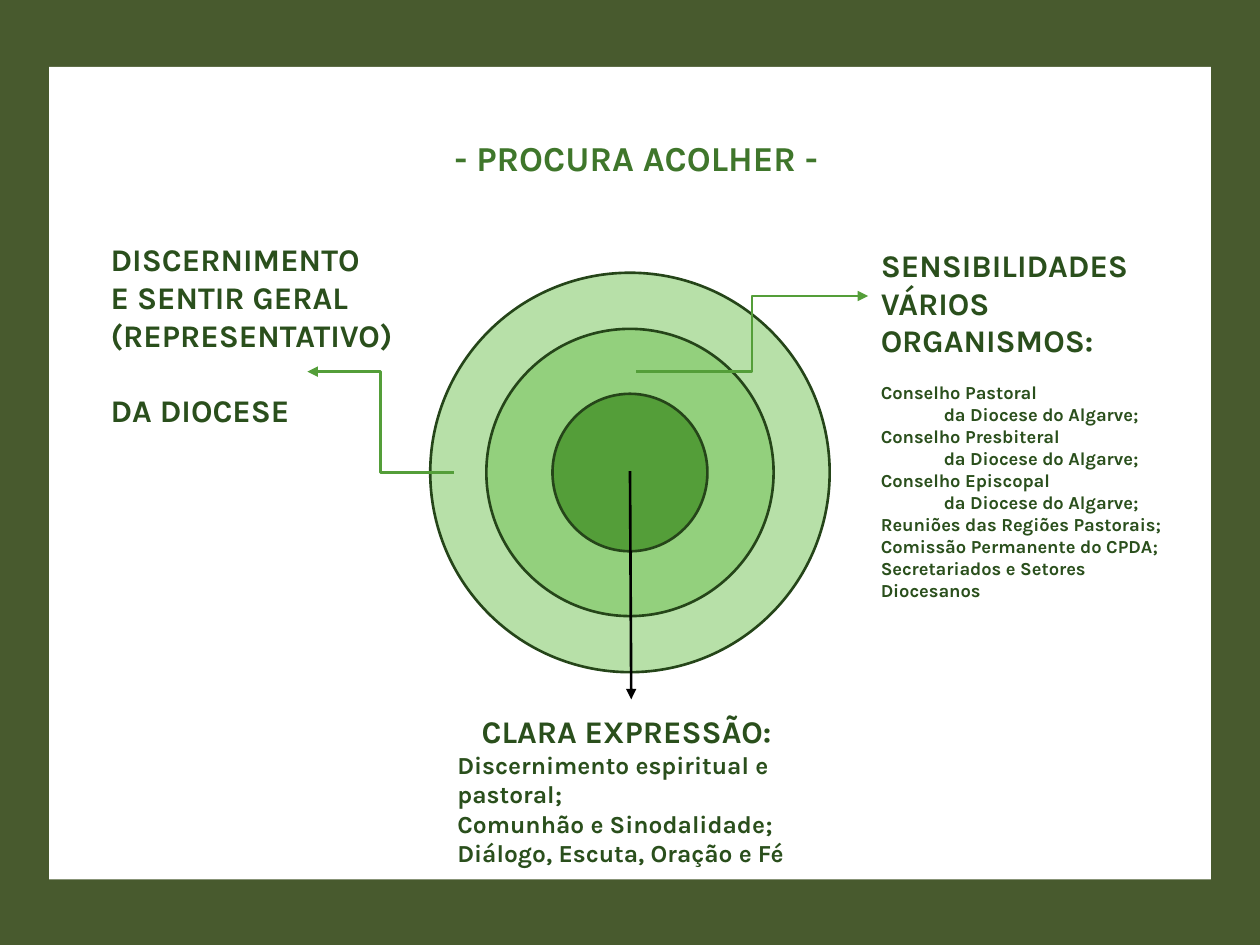
from lxml import etree
from pptx import Presentation
from pptx.dml.color import RGBColor
from pptx.enum.shapes import MSO_CONNECTOR, MSO_SHAPE
from pptx.enum.text import MSO_ANCHOR, MSO_AUTO_SIZE, PP_ALIGN
from pptx.oxml.ns import qn
from pptx.util import Inches, Pt

RECTANGLE, OVAL = MSO_SHAPE.RECTANGLE, MSO_SHAPE.OVAL
ELBOW, STRAIGHT = MSO_CONNECTOR.ELBOW, MSO_CONNECTOR.STRAIGHT
LEFT, CENTER = PP_ALIGN.LEFT, PP_ALIGN.CENTER
TOP, NO_FIT = MSO_ANCHOR.TOP, MSO_AUTO_SIZE.NONE

OLIVE = RGBColor(0x48, 0x5A, 0x2E)
WHITE = RGBColor(0xFF, 0xFF, 0xFF)
BLACK = RGBColor(0, 0, 0)
TITLE_GREEN = RGBColor(0x3F, 0x76, 0x2B)
TEXT_GREEN = RGBColor(0x2A, 0x4F, 0x1C)
OUTLINE = RGBColor(0x25, 0x45, 0x19)
PALE = RGBColor(0xB7, 0xE0, 0xA8)
MEDIUM = RGBColor(0x93, 0xD0, 0x7D)
STRONG = RGBColor(0x54, 0x9E, 0x39)


class SlideBuilder:
    """Holds the style and the current slide, with a method for each kind of element."""

    font = "Karla"
    line_width = Pt(1.5)

    def __init__(self, page):
        self.page = page

    def shape(self, kind, left, top, width, height, fill, outline=None):
        shape = self.page.shapes.add_shape(
            kind, Inches(left), Inches(top), Inches(width), Inches(height))
        shape.shadow.inherit = False
        shape.fill.solid()
        shape.fill.fore_color.rgb = fill
        if outline is None:
            shape.line.fill.background()
        else:
            shape.line.color.rgb = outline
            shape.line.width = self.line_width

    def arrow(self, kind, start, end, color):
        points = [Inches(value) for value in (*start, *end)]
        arrow = self.page.shapes.add_connector(kind, *points)
        arrow.line.color.rgb = color
        arrow.line.width = self.line_width
        properties = arrow.element.spPr
        etree.SubElement(properties.find(qn("a:ln")), qn("a:tailEnd"), type="triangle")
        etree.SubElement(properties, qn("a:effectLst"))

    def text_box(self):
        return self.page.shapes.add_textbox(0, 0, 0, 0)

    def text(self, box, place, lines, color=TEXT_GREEN, wrap=True):
        self.page.shapes.element.append(box.element)
        box.left, box.top, box.width, box.height = [Inches(value) for value in place]
        frame = box.text_frame
        frame.auto_size = NO_FIT
        frame.word_wrap = wrap
        frame.vertical_anchor = TOP
        for index, line in enumerate(lines):
            para = frame.paragraphs[0] if index == 0 else frame.add_paragraph()
            self.paragraph(para, color, *line)

    def paragraph(self, para, color, wording, size, indent=0, before=0, align=LEFT):
        properties = para._p.get_or_add_pPr()
        properties.set("marL", str(Inches(indent)))
        properties.set("indent", "0")
        etree.SubElement(properties, qn("a:buNone"))
        para.alignment = align
        para.space_before = Pt(before)
        span = para.add_run()
        span.text = wording
        span.font.name = self.font
        span.font.size = Pt(size)
        span.font.bold = True
        span.font.color.rgb = color


def main():
    deck = Presentation()
    deck.slide_width, deck.slide_height = Inches(10), Inches(7.5)
    page = deck.slides.add_slide(deck.slide_layouts[3])
    title, organisms, expression = list(page.placeholders)[:3]
    builder = SlideBuilder(page)

    builder.shape(RECTANGLE, 0, 0, 10, 7.5, OLIVE)
    builder.shape(RECTANGLE, 0.39, 0.53, 9.22, 6.45, WHITE)
    builder.text(title, (3.49, 1.03, 3.12, 0.44),
                 [("- PROCURA ACOLHER -", 20, 0, 0, CENTER)], TITLE_GREEN, wrap=False)

    for width, height, fill in ((3.17, 3.17, PALE), (2.28, 2.28, MEDIUM), (1.23, 1.25, STRONG)):
        builder.shape(OVAL, 5 - width / 2, 3.75 - height / 2, width, height, fill, OUTLINE)

    builder.arrow(ELBOW, (3.6, 3.75), (2.44, 2.95), STRONG)
    builder.arrow(ELBOW, (5.05, 2.95), (6.89, 2.35), STRONG)
    builder.arrow(STRAIGHT, (5, 3.74), (5.01, 5.55), BLACK)

    builder.text(builder.text_box(), (0.78, 1.86, 2.44, 1.6), [
        ("DISCERNIMENTO", 18),
        ("E SENTIR GERAL", 18),
        ("(REPRESENTATIVO)", 18),
        ("DA DIOCESE", 18, 0, 21.5),
    ], wrap=False)

    diocese = ("da Diocese do Algarve;", 10.5, 0.5)
    builder.text(organisms, (6.89, 1.9, 2.6, 3.08), [
        ("SENSIBILIDADES", 18),
        ("VÁRIOS", 18),
        ("ORGANISMOS:", 18),
        ("Conselho Pastoral", 10.5, 0, 12.5),
        diocese,
        ("Conselho Presbiteral", 10.5),
        diocese,
        ("Conselho Episcopal", 10.5),
        diocese,
        ("Reuniões das Regiões Pastorais;", 10.5),
        ("Comissão Permanente do CPDA;", 10.5),
        ("Secretariados e Setores Diocesanos", 10.5),
    ])

    builder.text(expression, (3.03, 5.6, 3.95, 1.35), [
        ("CLARA EXPRESSÃO: ", 18, 0, 0, CENTER),
        ("Discernimento espiritual e pastoral;", 14, 0.5),
        ("Comunhão e Sinodalidade;", 14, 0.5),
        ("Diálogo, Escuta, Oração e Fé", 14, 0.5),
    ])

    deck.save("out.pptx")


if __name__ == "__main__":
    main()
